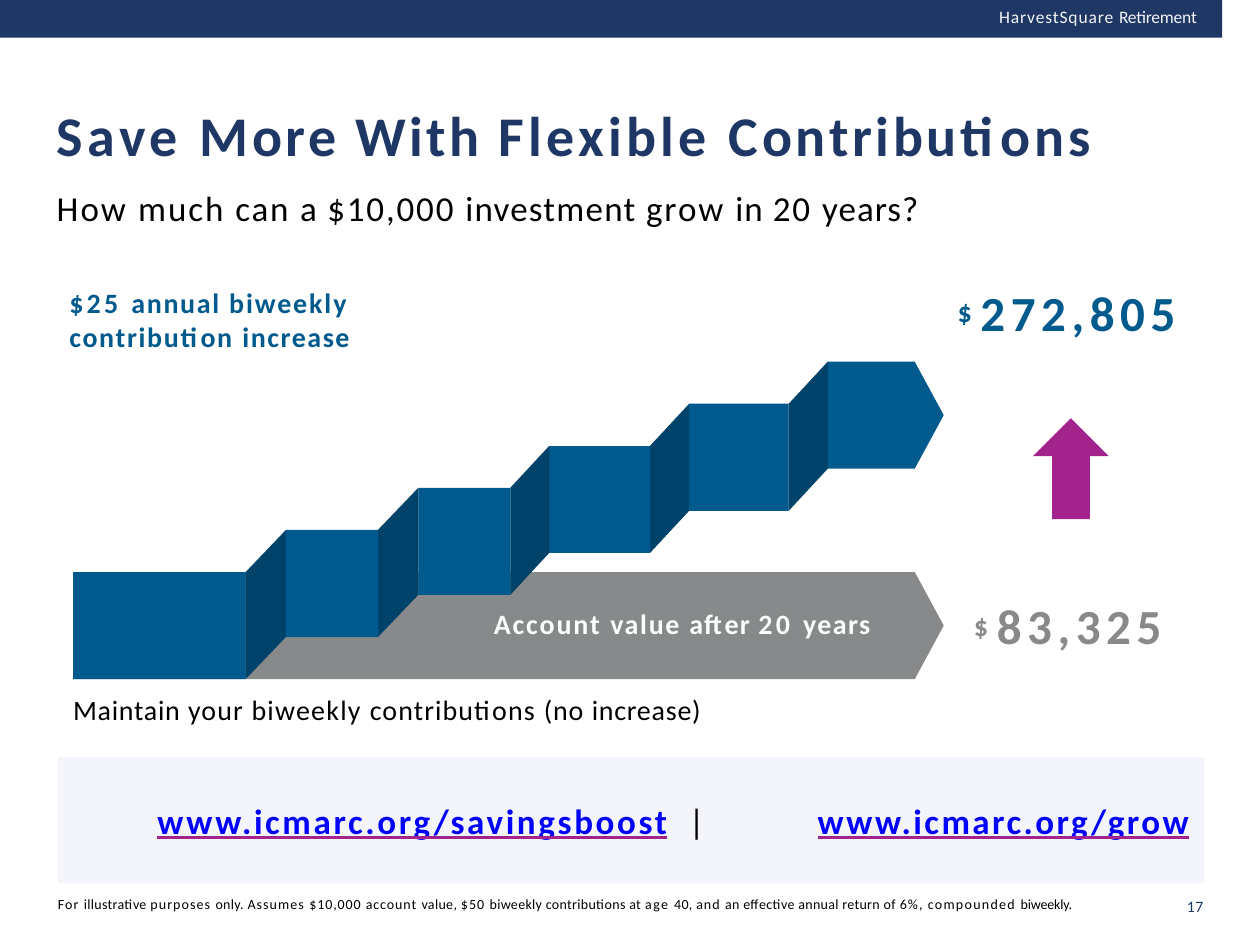
from dataclasses import dataclass
from itertools import pairwise

import lxml.etree
import pptx
import pptx.dml.color
import pptx.enum.shapes
import pptx.enum.text
import pptx.oxml.ns
import pptx.util

NAVY = pptx.dml.color.RGBColor(0x1E, 0x37, 0x64)
PALE = pptx.dml.color.RGBColor(0xF4, 0xF5, 0xFA)
GRAY = pptx.dml.color.RGBColor(0x87, 0x89, 0x8A)
BLUE = pptx.dml.color.RGBColor(0x00, 0x5A, 0x8D)
DARK_BLUE = pptx.dml.color.RGBColor(0x00, 0x43, 0x6A)
PURPLE = pptx.dml.color.RGBColor(0xA2, 0x23, 0x8B)
BLACK = pptx.dml.color.RGBColor(0x00, 0x00, 0x00)
NEAR_WHITE = pptx.dml.color.RGBColor(0xFD, 0xFF, 0xFD)
LINK_BLUE = pptx.dml.color.RGBColor(0x00, 0x00, 0xFF)

PRESETS = pptx.enum.shapes.MSO_SHAPE
qn = pptx.oxml.ns.qn
Outline = list[tuple[float, float]]


@dataclass
class Step:
    left: float
    right: float
    top: float


@dataclass
class Words:
    text: str
    spacing: float
    size: float
    color: pptx.dml.color.RGBColor
    bold: bool = False
    raised: bool = False
    link: bool = False


@dataclass
class Caption:
    left: float
    top: float
    width: float
    height: float
    words: list[Words]
    inset_left: float = 0.01
    inset_top: float = 0.01


def phrase(size: float, color, bold: bool, *parts: tuple[str, float]) -> list[Words]:
    return [Words(text, spacing, size, color, bold) for text, spacing in parts]


def amount(value: str, color) -> list[Words]:
    return [Words("$", 4.9, 27.8, color, True, raised=True),
            Words(value, 3.2, 28, color, True)]


def paint(shape, color) -> None:
    shape.shadow.inherit = False
    shape.fill.solid()
    shape.fill.fore_color.rgb = color
    shape.line.fill.background()


def draw_shape(slide, preset, left: float, top: float, width: float, height: float, color):
    shape = slide.shapes.add_shape(preset, *map(pptx.util.Inches, (left, top, width, height)))
    paint(shape, color)
    if preset == PRESETS.PENTAGON:
        shape.adjustments[0] = 0.27
    return shape


def draw_outlines(slide, outlines: list[Outline], color) -> None:
    contours = [[tuple(map(pptx.util.Inches, corner)) for corner in outline]
                for outline in outlines]
    builder = slide.shapes.build_freeform(*contours[0][0])
    for number, (start, *others) in enumerate(contours):
        if number:
            builder.move_to(*start)
        builder.add_line_segments(others, close=True)
    paint(builder.convert_to_shape(), color)


def write(frame, words: list[Words], inset_left: float, inset_top: float) -> None:
    frame_format = {
        "word_wrap": True,
        "margin_left": pptx.util.Inches(inset_left),
        "margin_top": pptx.util.Inches(inset_top),
        "margin_right": 0,
        "margin_bottom": 0,
    }
    for name, value in frame_format.items():
        setattr(frame, name, value)
    paragraph = frame.paragraphs[0]
    paragraph.alignment = pptx.enum.text.PP_ALIGN.LEFT
    for part in words:
        run = paragraph.add_run()
        run.text = part.text
        run_format = {
            "name": "Calibri",
            "size": pptx.util.Pt(part.size),
            "bold": part.bold,
            "underline": part.link,
        }
        for name, value in run_format.items():
            setattr(run.font, name, value)
        run.font.color.rgb = part.color
        properties = run._r.get_or_add_rPr()
        properties.set("spc", str(round(part.spacing * 100)))
        if part.raised:
            properties.set("baseline", "17000")
        if part.link:
            underline = lxml.etree.Element(qn("a:uFill"))
            solid = lxml.etree.SubElement(underline, qn("a:solidFill"))
            lxml.etree.SubElement(solid, qn("a:srgbClr")).set("val", str(PURPLE))
            properties.find(qn("a:latin")).addprevious(underline)


def draw_caption(slide, caption: Caption) -> None:
    box = slide.shapes.add_textbox(*map(pptx.util.Inches, (
        caption.left, caption.top, caption.width, caption.height)))
    write(box.text_frame, caption.words, caption.inset_left, caption.inset_top)


BASE_TOP = 4.54
BAND = 0.85
RISE = 0.334
TIP = 0.23
SPANS = [(0.58, 1.95), (2.27, 3), (3.32, 4.05), (4.36, 5.16), (5.47, 6.26), (6.57, 7.49)]
STEPS = [Step(left, right, BASE_TOP - RISE * level)
         for level, (left, right) in enumerate(SPANS)]

CAPTIONS = [
    Caption(9.41, 7.11, 0.2, 0.18, phrase(9, NAVY, False, ("17", 0.4))),
    Caption(7.92, 0.04, 1.69, 0.19, phrase(
        10, PALE, False, ("HarvestSquare ", 0.5), ("Retirement", -0.1))),
    Caption(7.56, 2.23, 1.88, 0.49, amount("272,805", BLUE), 0.04),
    Caption(7.69, 4.72, 1.63, 0.49, amount("83,325", GRAY), 0.04),
    Caption(0.57, 5.49, 5.1, 0.29, phrase(
        16, BLACK, False, ("Maintain ", 0.45), ("your ", 0.65), ("biweekly ", 0.75),
        ("contributions ", 0.65), ("(no ", 0.55), ("increase)", 0.45))),
    Caption(0.54, 2.26, 2.31, 0.56, phrase(
        16, BLUE, True, ("$25 ", 1.9), ("annual ", 1), ("biweekly ", 1.1),
        ("contribution ", 1), ("increase", 0.9))),
    Caption(3.91, 4.8, 3.08, 0.29, phrase(
        16, NEAR_WHITE, True, ("Account ", 1.1), ("value ", 1), ("after ", 0.65),
        ("20 ", 1.9), ("years", 0.85))),
    Caption(0.45, 7.1, 8.22, 0.16, phrase(
        8, BLACK, False, ("For ", 0.6), ("illustrative ", 0.18), ("purposes ", 0.6),
        ("only. ", 0.18), ("Assumes ", 0.6), ("$10,000 account ", 0.5), ("value, ", 0.18),
        ("$50 ", 0.6), ("biweekly contributions at ", 0.18), ("age ", 0.8), ("40, ", 0.18),
        ("and ", 0.6), ("an effective annual return of ", 0.18), ("6%, ", 0.6),
        ("compounded ", 0.7), ("biweekly.", -0.1))),
    Caption(0.37, 0.33, 8.57, 1.1, phrase(
        32, NAVY, True, ("Save ", 2.6), ("More ", 1.9), ("With ", 1.8),
        ("Flexible ", 2.5), ("Contributions", 2.1)), 0.08, 0.47),
    Caption(0.44, 1.47, 6.96, 0.36, phrase(
        20, BLACK, False, ("How ", 1.2), ("much ", 1.1), ("can ", 1), ("a ", 0.7),
        ("$10,000 ", 1.05), ("investment ", 0.7), ("grow ", 1.1), ("in ", 0.6),
        ("20 ", 1.1), ("years?", 0.6))),
]

LINKS = [
    Words("www.icmarc.org/savingsboost", 1.5, 20, LINK_BLUE, True, link=True),
    Words(" ", 6, 20, PURPLE, True),
    Words("|\t", -5.3, 20, BLACK),
    Words("www.icmarc.org/grow", 1.4, 20, LINK_BLUE, True, link=True),
]


def face(step: Step) -> Outline:
    bottom = step.top + BAND
    if step is not STEPS[-1]:
        return [(step.left, step.top), (step.right, step.top),
                (step.right, bottom), (step.left, bottom)]
    shoulder = step.right - TIP
    return [(step.left, step.top), (shoulder, step.top),
            (step.right, step.top + BAND / 2), (shoulder, bottom), (step.left, bottom)]


def fold(lower: Step, upper: Step) -> Outline:
    return [(lower.right, lower.top), (upper.left, upper.top),
            (upper.left, upper.top + BAND), (lower.right, lower.top + BAND)]


def draw_staircase(slide) -> None:
    faces = [face(step) for step in STEPS]
    folds = [fold(lower, upper) for lower, upper in pairwise(STEPS)]
    draw_outlines(slide, faces[:3] + faces[4:], BLUE)
    draw_outlines(slide, folds[4:], DARK_BLUE)
    draw_outlines(slide, faces[3:4], BLUE)
    draw_outlines(slide, folds[:4], DARK_BLUE)


def draw_link_panel(slide) -> None:
    panel = draw_shape(slide, PRESETS.RECTANGLE, 0.46, 6.01, 9.1, 1, PALE)
    panel.text_frame.vertical_anchor = pptx.enum.text.MSO_ANCHOR.MIDDLE
    tabs = lxml.etree.SubElement(
        panel.text_frame.paragraphs[0]._p.get_or_add_pPr(), qn("a:tabLst"))
    tab = lxml.etree.SubElement(tabs, qn("a:tab"))
    tab.set("pos", str(pptx.util.Inches(5.24)))
    tab.set("algn", "l")
    write(panel.text_frame, LINKS, 0.79, 0)


def main() -> None:
    deck = pptx.Presentation()
    deck.slide_width = pptx.util.Inches(10)
    deck.slide_height = pptx.util.Inches(7.5)
    slide = deck.slides.add_slide(deck.slide_layouts[6])
    draw_shape(slide, PRESETS.RECTANGLE, 0, 0, 9.7, 0.3, NAVY)
    draw_shape(slide, PRESETS.PENTAGON, 0.58, BASE_TOP, 6.91, BAND, GRAY)
    draw_staircase(slide)
    draw_link_panel(slide)
    draw_shape(slide, PRESETS.UP_ARROW, 8.2, 3.32, 0.6, 0.8, PURPLE)
    for caption in CAPTIONS:
        draw_caption(slide, caption)
    deck.save("out.pptx")


if __name__ == "__main__":
    main()
